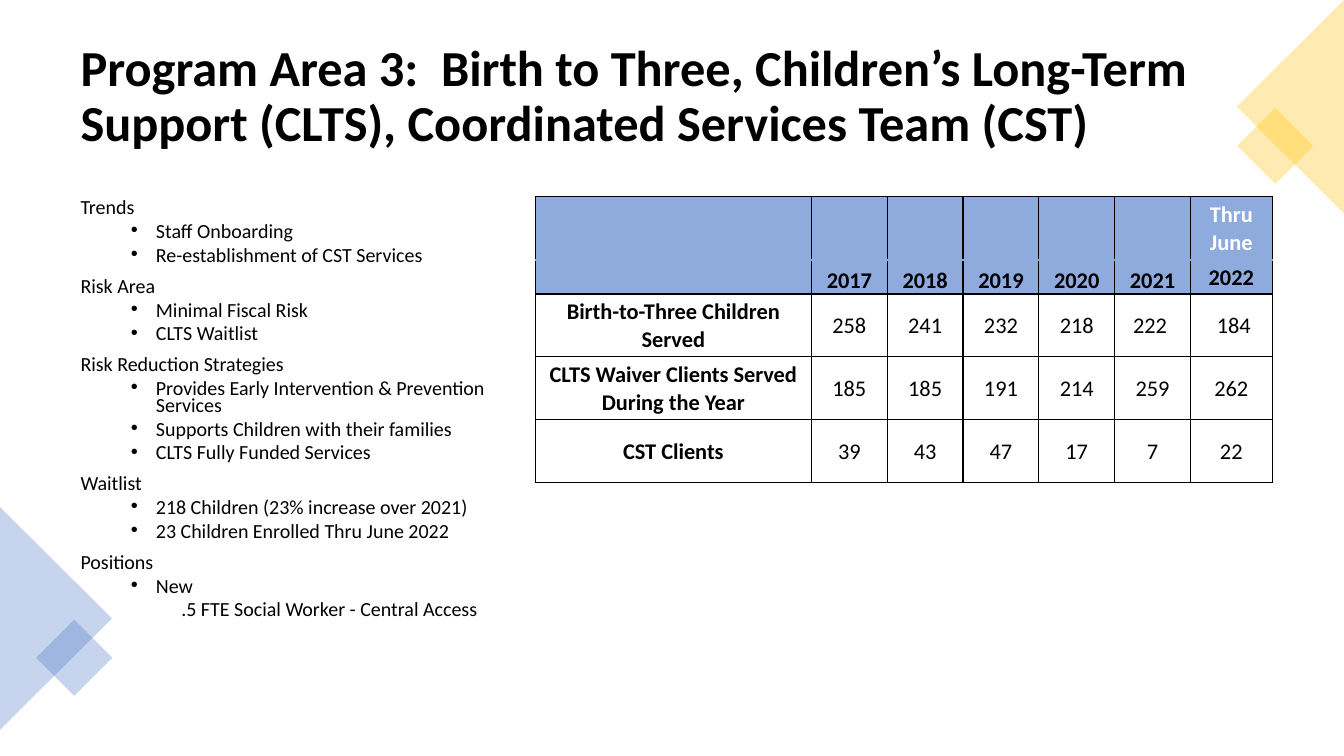
from dataclasses import dataclass

from lxml import etree
from pptx import Presentation
from pptx.dml.color import RGBColor
from pptx.enum.shapes import MSO_SHAPE
from pptx.enum.text import MSO_ANCHOR, PP_ALIGN
from pptx.oxml.ns import qn
from pptx.util import Cm, Pt

TRIANGLE, RECTANGLE = MSO_SHAPE.ISOSCELES_TRIANGLE, MSO_SHAPE.RECTANGLE
TOP, MIDDLE, BOTTOM = MSO_ANCHOR.TOP, MSO_ANCHOR.MIDDLE, MSO_ANCHOR.BOTTOM
LEFT, CENTER = PP_ALIGN.LEFT, PP_ALIGN.CENTER


@dataclass(frozen=True)
class Theme:
    """Colours, font and type sizes of the slide."""
    font: str = "Calibri"
    text: str = "000000"
    light: str = "FFFFFF"
    header: str = "8FAADC"
    blue: str = "4472C4"
    gold: str = "FFC000"
    alpha: int = 30000
    title_size: float = 36
    body_size: float = 14.3
    table_size: float = 16


THEME = Theme()

TITLE = ("Program Area 3:  Birth to Three, Children’s Long-Term Support (CLTS), "
         "Coordinated Services Team (CST)")

OUTLINE = [
    (0, "Trends"),
    (1, "Staff Onboarding"),
    (1, "Re-establishment of CST Services"),
    (0, "Risk Area"),
    (1, "Minimal Fiscal Risk"),
    (1, "CLTS Waitlist"),
    (0, "Risk Reduction Strategies"),
    (1, "Provides Early Intervention & Prevention Services"),
    (1, "Supports Children with their families"),
    (1, "CLTS Fully Funded Services"),
    (0, "Waitlist"),
    (1, "218 Children (23% increase over 2021)"),
    (1, "23 Children Enrolled Thru June 2022"),
    (0, "Positions"),
    (1, "New"),
    (2, ".5 FTE Social Worker - Central Access"),
]

CLIENT_ROWS = [
    ["", "", "", "", "", "", "Thru June"],
    ["", "2017", "2018", "2019", "2020", "2021", "2022"],
    ["Birth-to-Three Children Served", "258", "241", "232", "218", "222 ", " 184"],
    ["CLTS Waiver Clients Served During the Year", "185", "185", "191", "214", "259", "262"],
    ["CST Clients", "39", "43", "47", "17", "7", "22"],
]
COLUMN_WIDTHS = [6.96] + [1.91] * 5 + [2.06]
ROW_HEIGHTS = [1.6, 0.86] + [1.58] * 3
HEADER_ROWS = 2


def write_text(paragraph, text, size, color=THEME.text, bold=False, align=LEFT,
               line_spacing=1.0, space_before=0):
    """Fill a paragraph with one formatted run."""
    paragraph.alignment = align
    paragraph.line_spacing = line_spacing
    paragraph.space_before = Pt(space_before)
    run = paragraph.add_run()
    run.text = text
    run.font.name = THEME.font
    run.font.size = Pt(size)
    run.font.bold = bold
    run.font.color.rgb = RGBColor.from_string(color)


def add_text_frame(slide, box, anchor):
    """Add a wrapping text box and return its text frame."""
    text_frame = slide.shapes.add_textbox(*(Cm(length) for length in box)).text_frame
    text_frame.word_wrap = True
    text_frame.vertical_anchor = anchor
    return text_frame


def add_title(slide, box):
    """Place the slide title in the box."""
    text_frame = add_text_frame(slide, box, MIDDLE)
    write_text(text_frame.paragraphs[0], TITLE, THEME.title_size, bold=True, line_spacing=0.9)


def add_outline(slide, box):
    """Place the bulleted outline in the box."""
    text_frame = add_text_frame(slide, box, TOP)
    margins = [(0, 0), (1.9, -0.63), (2.54, 0)]
    for index, (level, text) in enumerate(OUTLINE):
        paragraph = text_frame.add_paragraph() if index else text_frame.paragraphs[0]
        paragraph.level = level
        write_text(paragraph, text, THEME.body_size, line_spacing=0.7,
                   space_before=5 if level else 10)
        properties = paragraph._p.get_or_add_pPr()
        margin, indent = margins[level]
        properties.set("marL", str(Cm(margin)))
        properties.set("indent", str(Cm(indent)))
        if level == 1:
            etree.SubElement(properties, qn("a:buFont")).set("typeface", "Arial")
            etree.SubElement(properties, qn("a:buChar")).set("char", "•")
        else:
            etree.SubElement(properties, qn("a:buNone"))


def add_border(cell, side, color):
    """Draw one cell edge; side is L, R, T or B."""
    line = etree.SubElement(cell._tc.get_or_add_tcPr(), qn(f"a:ln{side}"), w=str(Pt(1)))
    fill = etree.SubElement(line, qn("a:solidFill"))
    etree.SubElement(fill, qn("a:srgbClr"), val=color)


def format_cell(cell, text, row, column):
    """Write and style one table cell according to its position."""
    is_header = row < HEADER_ROWS
    is_last = column == len(COLUMN_WIDTHS) - 1
    cell.margin_left = cell.margin_right = cell.margin_top = Cm(0.03)
    cell.margin_bottom = 0
    cell.vertical_anchor = BOTTOM if row == 1 and not is_last else MIDDLE
    write_text(cell.text_frame.paragraphs[0], text, THEME.table_size,
               color=THEME.light if row == 0 else THEME.text,
               bold=is_header or column == 0, align=CENTER)
    hidden_edge = {0: "B", 1: "T"}.get(row)
    for side in "LRTB":
        add_border(cell, side, THEME.header if side == hidden_edge else THEME.text)
    if is_header:
        cell.fill.solid()
        cell.fill.fore_color.rgb = RGBColor.from_string(THEME.header)
    else:
        cell.fill.background()


def add_client_table(slide, left, top):
    """Place the table of clients served per year."""
    table = slide.shapes.add_table(
        len(ROW_HEIGHTS), len(COLUMN_WIDTHS), Cm(left), Cm(top),
        Cm(sum(COLUMN_WIDTHS)), Cm(sum(ROW_HEIGHTS))).table
    table.first_row = table.horz_banding = False
    for column, width in zip(table.columns, COLUMN_WIDTHS):
        column.width = Cm(width)
    for row, height in zip(table.rows, ROW_HEIGHTS):
        row.height = Cm(height)
    for row, texts in enumerate(CLIENT_ROWS):
        for column, text in enumerate(texts):
            format_cell(table.cell(row, column), text, row, column)


def add_translucent_shape(group, kind, center, size, rotation, color):
    """Add a rotated, translucent shape around a centre point."""
    (center_x, center_y), (width, height) = center, size
    shape = group.shapes.add_shape(kind, Cm(center_x - width / 2), Cm(center_y - height / 2),
                                   Cm(width), Cm(height))
    shape.rotation = rotation
    shape.shadow.inherit = False
    shape.line.fill.background()
    shape.fill.solid()
    shape.fill.fore_color.rgb = RGBColor.from_string(color)
    color_element = shape._element.spPr.find(f".//{qn('a:srgbClr')}")
    etree.SubElement(color_element, qn("a:alpha"), val=str(THEME.alpha))


def add_edge_ornament(slide, box, rotation, square_offset, color):
    """Fill the box with a sideways triangle and set a small diamond near its tip."""
    left, top, width, height = box
    center_x, center_y = left + width / 2, top + height / 2
    group = slide.shapes.add_group_shape()
    add_translucent_shape(group, TRIANGLE, (center_x, center_y), (height, width), rotation, color)
    square_center = (center_x + square_offset, center_y + 0.99)
    add_translucent_shape(group, RECTANGLE, square_center, (1.36, 1.36), 45, color)


def build_program_slide(presentation):
    """Add the program area slide."""
    slide = presentation.slides.add_slide(presentation.slide_layouts[6])
    add_title(slide, (1.78, 0.89, 30.3, 3.15))
    add_outline(slide, (1.78, 4.95, 11.13, 12.22))
    add_edge_ornament(slide, (0, 12.78, 2.82, 5.61), 90, 0.46, THEME.blue)
    add_edge_ornament(slide, (31.17, 0, 2.7, 5.38), 270, -0.38, THEME.gold)
    add_client_table(slide, 13.49, 4.95)


def main():
    """Build and save the presentation."""
    presentation = Presentation()
    presentation.slide_width = Cm(33.87)
    presentation.slide_height = Cm(19.05)
    build_program_slide(presentation)
    presentation.save("out.pptx")


if __name__ == "__main__":
    main()
